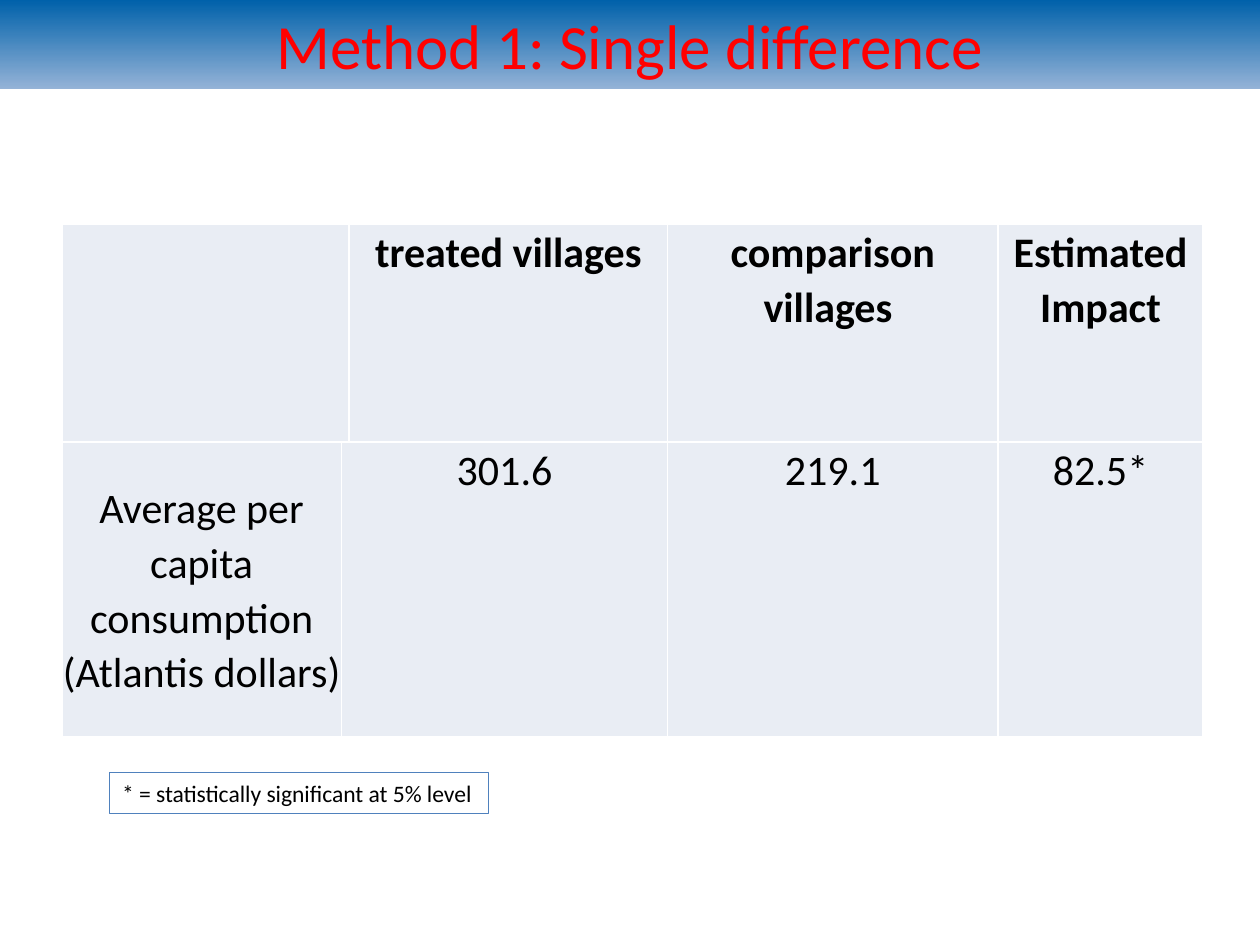
from pptx import Presentation
from pptx.dml.color import RGBColor
from pptx.enum.shapes import MSO_SHAPE
from pptx.enum.text import MSO_ANCHOR, PP_ALIGN
from pptx.util import Inches, Pt

COLORS = {
    "band_top": "0061AA", "band_bottom": "95B3D7", "title": "FF0000",
    "cell": "E9EDF4", "text": "000000", "note_line": "4F81BD",
}
TITLE = "Method 1: Single difference"
NOTE = "* = statistically significant at 5% level"

# Table content: (row, first column, last column, paragraphs)
CELLS = [
    (0, 0, 1, []),
    (0, 2, 2, ["treated villages"]),
    (0, 3, 3, ["comparison villages "]),
    (0, 4, 4, ["Estimated", "Impact"]),
    (1, 0, 0, ["Average per capita consumption (Atlantis dollars) "]),
    (1, 1, 2, ["301.6"]),
    (1, 3, 3, ["219.1"]),
    (1, 4, 4, ["82.5*"]),
]
COLUMN_WIDTHS = [2.22, 0.06, 2.53, 2.62, 1.63]
ROW_HEIGHTS = [1.73, 2.34]

FORMATS = {
    "title": {"size": Pt(36)},
    "header": {"size": Pt(24), "bold": True},
    "body": {"size": Pt(24), "bold": False},
    "note": {"size": Pt(13.5)},
}


def color(name):
    return RGBColor.from_string(COLORS[name])


def write(frame, lines, style, align, ink="text", spacing=None):
    for index, line in enumerate(lines):
        para = frame.add_paragraph() if index else frame.paragraphs[0]
        para.alignment = align
        para.line_spacing = spacing
        span = para.add_run()
        span.text = line
        span.font.name = "Calibri"
        span.font.color.rgb = color(ink)
        for name, value in FORMATS[style].items():
            setattr(span.font, name, value)


def add_box(page, left, top, width, height):
    box = page.shapes.add_shape(MSO_SHAPE.RECTANGLE, Inches(left), Inches(top),
                                Inches(width), Inches(height))
    box.shadow.inherit = False
    box.text_frame.word_wrap = True
    box.text_frame.vertical_anchor = MSO_ANCHOR.MIDDLE
    return box


deck = Presentation()
deck.slide_width, deck.slide_height = Inches(10), Inches(7.5)
page = deck.slides.add_slide(deck.slide_layouts[6])

# Title band
band = add_box(page, 0, 0, 10, 0.71)
band.line.fill.background()
band.fill.gradient()
band.fill.gradient_angle = 270
for stop, position, name in zip(band.fill.gradient_stops, (0, 1), ("band_top", "band_bottom")):
    stop.position = position
    stop.color.rgb = color(name)
write(band.text_frame, [TITLE], "title", PP_ALIGN.CENTER, "title")

# Results table
table = page.shapes.add_table(
    len(ROW_HEIGHTS), len(COLUMN_WIDTHS), Inches(0.49), Inches(1.78),
    Inches(sum(COLUMN_WIDTHS)), Inches(sum(ROW_HEIGHTS))).table
table.first_row = table.horz_banding = False
for column, width in zip(table.columns, COLUMN_WIDTHS):
    column.width = Inches(width)
for row, height in zip(table.rows, ROW_HEIGHTS):
    row.height = Inches(height)
for row, first, last, lines in CELLS:
    cell = table.cell(row, first)
    if last > first:
        cell.merge(table.cell(row, last))
    cell.fill.solid()
    cell.fill.fore_color.rgb = color("cell")
    for side in ("left", "right", "top", "bottom"):
        setattr(cell, f"margin_{side}", 0)
    is_label = row == 1 and first == 0
    cell.vertical_anchor = MSO_ANCHOR.MIDDLE if is_label else MSO_ANCHOR.TOP
    write(cell.text_frame, lines, "body" if row else "header", PP_ALIGN.CENTER, spacing=1.07)

# Significance note
note = add_box(page, 0.87, 6.13, 3.01, 0.33)
note.fill.background()
note.line.color.rgb = color("note_line")
note.line.width = Pt(0.75)
note.text_frame.vertical_anchor = MSO_ANCHOR.TOP
write(note.text_frame, [NOTE], "note", PP_ALIGN.LEFT)

deck.save("out.pptx")
